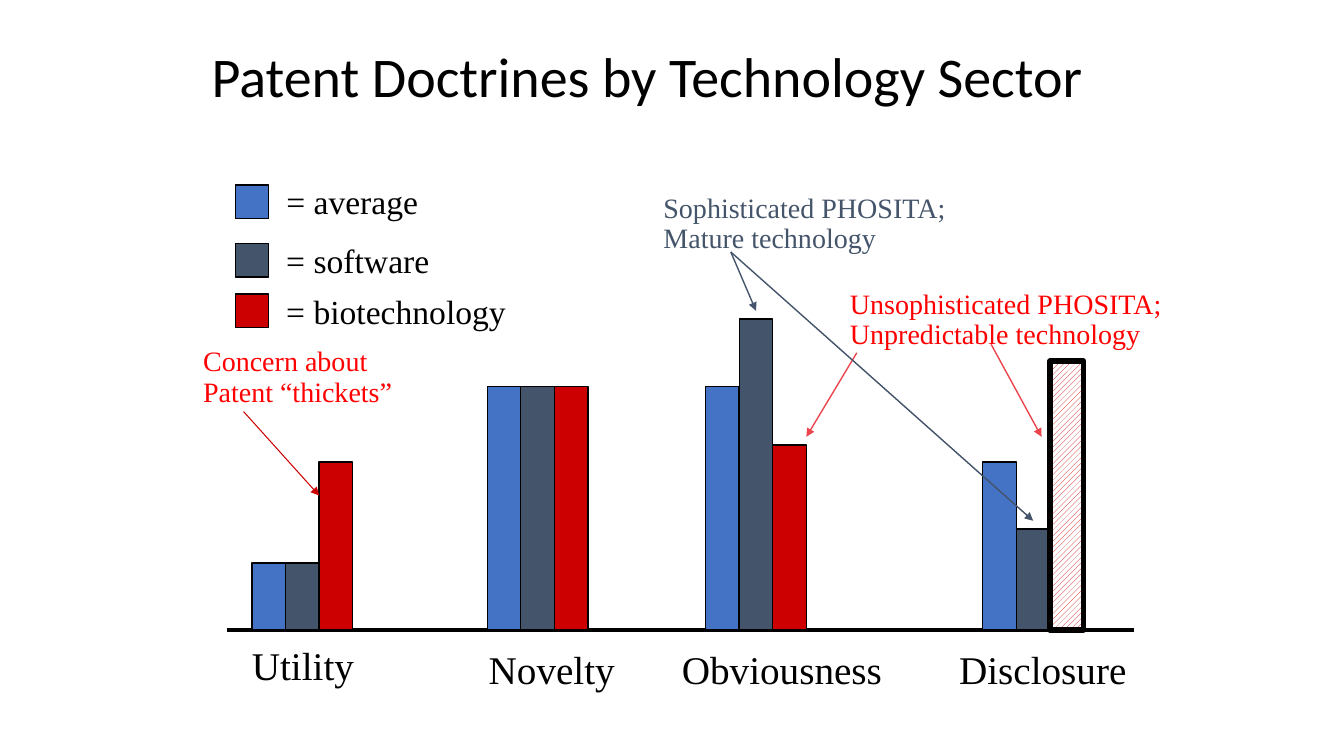
"""Build the slide comparing patent doctrines across technology sectors."""
import dataclasses
import typing

import lxml.etree
import pptx
import pptx.dml.color
import pptx.enum.dml
import pptx.enum.shapes
import pptx.enum.text
import pptx.oxml.ns
import pptx.util

UNIT = pptx.util.Inches(1) // 12
COLUMNS, ROWS = 160, 90
BASELINE = 75
BAR = 4
SWATCH_COL = 28


@dataclasses.dataclass(frozen=True)
class Theme:
    title_font: str = "Calibri"
    body_font: str = "Times New Roman"
    black: str = "000000"
    white: str = "FFFFFF"
    average: str = "4472C4"
    software: str = "44546A"
    biotech: str = "CC0000"
    warning: str = "FF0000"
    pointer: str = "EC444C"
    title_size: int = 40
    label_size: int = 28
    legend_size: int = 24
    note_size: int = 20


THEME = Theme()


class Box(typing.NamedTuple):
    col: float
    row: float
    cols: float
    rows: float


class Doctrine(typing.NamedTuple):
    name: str
    label: Box
    col: int
    heights: tuple[int, int, int]


class Sector(typing.NamedTuple):
    name: str
    color: str
    row: int
    label_cols: float


class Note(typing.NamedTuple):
    lines: tuple[str, ...]
    box: Box
    color: str


class Arrow(typing.NamedTuple):
    start: tuple[int, int]
    end: tuple[int, int]
    color: str
    width: float = 1


DOCTRINES = (
    Doctrine("Utility", Box(28.8, 75.8, 14.6, 6.8), 30, (8, 8, 20)),
    Doctrine("Novelty", Box(57, 76.2, 17.4, 6.8), 58, (29, 29, 29)),
    Doctrine("Obviousness", Box(80, 76.2, 26.3, 6.8), 84, (29, 37, 22)),
    Doctrine("Disclosure", Box(113, 76.2, 22.3, 6.8), 117, (20, 12, 32)),
)
SECTORS = (
    Sector("average", THEME.average, 22, 18.1),
    Sector("software", THEME.software, 29, 19.4),
    Sector("biotechnology", THEME.biotech, 35, 28.6),
)
HATCHED = ("Disclosure", "biotechnology")
NOTES = (
    Note(("Sophisticated PHOSITA;", "Mature technology"),
         Box(77.8, 22.5, 36.2, 8.4), THEME.software),
    Note(("Unsophisticated PHOSITA;", "Unpredictable technology"),
         Box(100, 34, 39.7, 8.4), THEME.warning),
    Note(("Concern about", "Patent “thickets”"),
         Box(23, 40.8, 25, 8.4), THEME.warning),
)
ARROWS = (
    Arrow((102, 42), (96, 52), THEME.pointer),
    Arrow((118, 41), (124, 52), THEME.pointer),
    Arrow((87, 30), (90, 37), THEME.software),
    Arrow((87, 30), (123, 62), THEME.software),
    Arrow((29, 49), (38, 59), THEME.biotech, 0.75),
)


def grid(*cells: float) -> list[int]:
    return [round(cell * UNIT) for cell in cells]


def rgb(color: str) -> pptx.dml.color.RGBColor:
    return pptx.dml.color.RGBColor.from_string(color)


def write(tf, *lines: str, size: int, color: str = THEME.black,
          font: str = THEME.body_font, spacing: float = 1.0) -> None:
    for i, line in enumerate(lines):
        p = tf.add_paragraph() if i else tf.paragraphs[0]
        p.alignment = pptx.enum.text.PP_ALIGN.LEFT
        p.line_spacing = spacing
        r = p.add_run()
        r.text = line
        r.font.name = font
        r.font.size = pptx.util.Pt(size)
        r.font.color.rgb = rgb(color)


def add_text(slide, box: Box, *lines: str, **style) -> None:
    tf = slide.shapes.add_textbox(*grid(*box)).text_frame
    tf.word_wrap = False
    tf.auto_size = pptx.enum.text.MSO_AUTO_SIZE.SHAPE_TO_FIT_TEXT
    write(tf, *lines, **style)


def add_bar(slide, box: Box, color: str, hatched: bool = False) -> None:
    sp = slide.shapes.add_shape(pptx.enum.shapes.MSO_SHAPE.RECTANGLE, *grid(*box))
    sp.shadow.inherit = False
    if hatched:
        sp.fill.patterned()
        sp.fill.pattern = pptx.enum.dml.MSO_PATTERN.WIDE_UPWARD_DIAGONAL
        sp.fill.fore_color.rgb = rgb(color)
        sp.fill.back_color.rgb = rgb(THEME.white)
    else:
        sp.fill.solid()
        sp.fill.fore_color.rgb = rgb(color)
    sp.line.color.rgb = rgb(THEME.black)
    sp.line.width = pptx.util.Pt(4 if hatched else 1)


def add_line(slide, line: Arrow, head: bool = True) -> None:
    cxn = slide.shapes.add_connector(
        pptx.enum.shapes.MSO_CONNECTOR.STRAIGHT, *grid(*line.start, *line.end))
    cxn.line.color.rgb = rgb(line.color)
    cxn.line.width = pptx.util.Pt(line.width)
    qn = pptx.oxml.ns.qn
    sp_pr = cxn._element.spPr
    if head:
        lxml.etree.SubElement(sp_pr.find(qn("a:ln")), qn("a:tailEnd"), type="triangle")
    lxml.etree.SubElement(sp_pr, qn("a:effectLst"))


def add_title(slide, text: str) -> None:
    sp = slide.shapes.title
    sp.left, sp.top, sp.width, sp.height = grid(24, 4, 112, 11)
    tf = sp.text_frame
    tf.auto_size = pptx.enum.text.MSO_AUTO_SIZE.NONE
    tf.vertical_anchor = pptx.enum.text.MSO_ANCHOR.MIDDLE
    write(tf, text, size=THEME.title_size, font=THEME.title_font, spacing=0.9)


def main() -> None:
    prs = pptx.Presentation()
    prs.slide_width, prs.slide_height = grid(COLUMNS, ROWS)
    slide = prs.slides.add_slide(prs.slide_layouts[5])
    add_title(slide, "Patent Doctrines by Technology Sector")
    add_line(slide, Arrow((27, BASELINE), (135, BASELINE), THEME.black, 3), head=False)

    for doctrine in DOCTRINES:
        add_text(slide, doctrine.label, doctrine.name, size=THEME.label_size)
    for i, sector in enumerate(SECTORS):
        for doctrine in DOCTRINES:
            height = doctrine.heights[i]
            box = Box(doctrine.col + i * BAR, BASELINE - height, BAR, height)
            add_bar(slide, box, sector.color, (doctrine.name, sector.name) == HATCHED)
        add_bar(slide, Box(SWATCH_COL, sector.row, BAR, BAR), sector.color)
        add_text(slide, Box(SWATCH_COL + 4.9, sector.row - 1, sector.label_cols, 6),
                 f"= {sector.name}", size=THEME.legend_size)

    for note in NOTES:
        add_text(slide, note.box, *note.lines, size=THEME.note_size,
                 color=note.color, spacing=0.9)
    for arrow in ARROWS:
        add_line(slide, arrow)
    prs.save("out.pptx")


if __name__ == "__main__":
    main()
